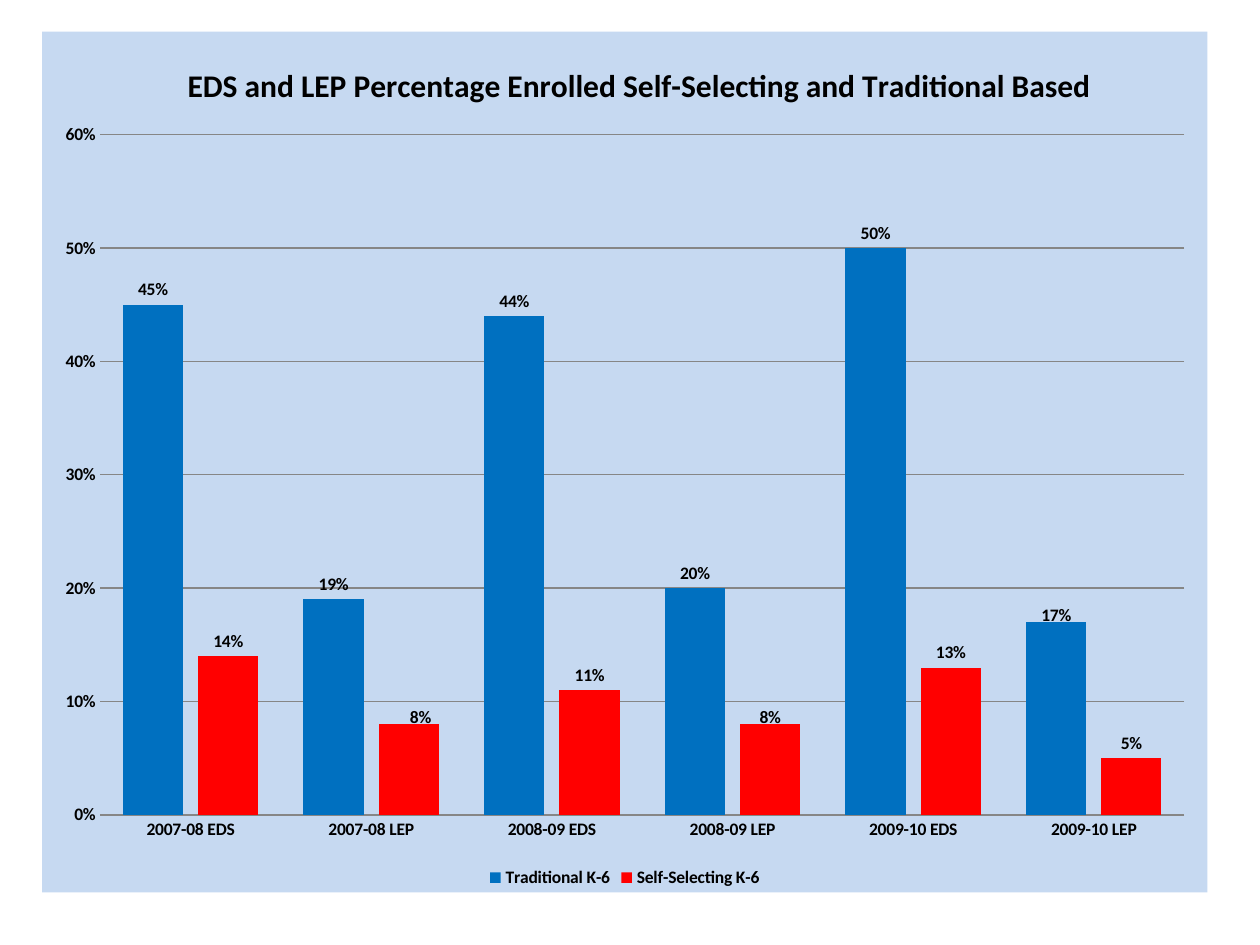
from dataclasses import dataclass, field

from lxml import etree
from pptx import Presentation
from pptx.chart.data import CategoryChartData
from pptx.dml.color import RGBColor
from pptx.enum import chart as kinds
from pptx.oxml import ns
from pptx.util import Pt


@dataclass(frozen=True)
class Theme:
    font: str = "Calibri"
    text: str = "000000"
    panel: str = "C6D9F1"
    grid: str = "868686"
    body_size: int = 10
    title_size: int = 18


@dataclass(frozen=True)
class Series:
    name: str
    color: str
    values: tuple[float, ...]
    # Label shifts by point index, as fractions of the chart size
    label_shifts: dict[int, tuple[float, float]] = field(default_factory=dict)


THEME = Theme()
TITLE = "EDS and LEP Percentage Enrolled Self-Selecting and Traditional Based"
CATEGORIES = [f"{year} {group}" for year in ("2007-08", "2008-09", "2009-10")
              for group in ("EDS", "LEP")]
SERIES = (
    Series("Traditional K-6", "0070C0", (0.45, 0.19, 0.44, 0.20, 0.50, 0.17),
           {5: (0, 0.01)}),
    Series("Self-Selecting K-6", "FF0000", (0.14, 0.08, 0.11, 0.08, 0.13, 0.05),
           {1: (0.01, 0.01), 3: (0, 0.01), 5: (0, 0)}),
)


def style_font(font, size: int = THEME.body_size) -> None:
    font.name = THEME.font
    font.size = Pt(size)
    font.bold = True
    font.color.rgb = RGBColor.from_string(THEME.text)


def make_layout(**settings: object) -> etree._Element:
    layout = etree.Element(ns.qn("c:layout"))
    manual = etree.SubElement(layout, ns.qn("c:manualLayout"))
    for name, value in settings.items():
        etree.SubElement(manual, ns.qn(f"c:{name}")).set("val", str(value))
    return layout


def replace_layout(parent, layout: etree._Element, position: int) -> None:
    for old in parent.findall(ns.qn("c:layout")):
        parent.remove(old)
    parent.insert(position, layout)


def fill_chart_area(chart, color: str) -> None:
    area = etree.Element(ns.qn("c:spPr"))
    fill = etree.SubElement(area, ns.qn("a:solidFill"))
    etree.SubElement(fill, ns.qn("a:srgbClr")).set("val", color)
    line = etree.SubElement(area, ns.qn("a:ln"))
    etree.SubElement(line, ns.qn("a:noFill"))
    chart.element.find(ns.qn("c:chart")).addnext(area)


def style_series(drawn, series: Series) -> None:
    drawn.format.fill.solid()
    drawn.format.fill.fore_color.rgb = RGBColor.from_string(series.color)
    drawn.invert_if_negative = False
    labels = drawn.data_labels
    labels.show_value = True
    labels.number_format = "0%"
    labels.number_format_is_linked = False
    labels.position = kinds.XL_LABEL_POSITION.OUTSIDE_END
    style_font(labels.font)
    for index, (across, down) in series.label_shifts.items():
        label = drawn.points[index].data_label
        label.position = kinds.XL_LABEL_POSITION.OUTSIDE_END
        style_font(label.font)
    # Each point label gets its own shift, in index order
    for element in labels._element.findall(ns.qn("c:dLbl")):
        index = int(element.find(ns.qn("c:idx")).get("val"))
        across, down = series.label_shifts[index]
        replace_layout(element, make_layout(x=across, y=down), 1)


def style_axis(axis) -> None:
    axis.major_tick_mark = kinds.XL_TICK_MARK.NONE
    axis.minor_tick_mark = kinds.XL_TICK_MARK.NONE
    style_font(axis.tick_labels.font)


def add_enrollment_chart(page) -> None:
    data = CategoryChartData(number_format="0%")
    data.categories = CATEGORIES
    for series in SERIES:
        data.add_series(series.name, series.values)
    chart = page.shapes.add_chart(
        kinds.XL_CHART_TYPE.COLUMN_CLUSTERED,
        Pt(24), Pt(18), Pt(666), Pt(492), data).chart
    style_font(chart.font)
    fill_chart_area(chart, THEME.panel)

    # Title
    chart.has_title = True
    frame = chart.chart_title.text_frame
    frame.text = TITLE
    style_font(frame.paragraphs[0].runs[0].font, THEME.title_size)
    chart.chart_title.include_in_layout = False
    replace_layout(chart.chart_title._element, make_layout(
        xMode="edge", yMode="edge", x=0.12, y=0.03), 1)

    # Columns
    plot = chart.plots[0]
    plot.gap_width = 75
    plot.overlap = -25
    plot.vary_by_categories = False
    for drawn, series in zip(plot.series, SERIES):
        style_series(drawn, series)
    plot_area = chart.element.find(".//" + ns.qn("c:plotArea"))
    replace_layout(plot_area, make_layout(
        layoutTarget="inner", xMode="edge", yMode="edge",
        x=0.05, y=0.12, w=0.93, h=0.79), 0)

    # Axes
    grid_color = RGBColor.from_string(THEME.grid)
    style_axis(chart.category_axis)
    chart.category_axis.format.line.color.rgb = grid_color
    values = chart.value_axis
    style_axis(values)
    values.minimum_scale, values.maximum_scale, values.major_unit = 0, 0.6, 0.1
    values.tick_labels.number_format = "0%"
    values.tick_labels.number_format_is_linked = False
    values.format.line.fill.background()
    values.has_major_gridlines = True
    values.major_gridlines.format.line.color.rgb = grid_color
    values.major_gridlines.format.line.width = Pt(0.75)

    # Legend
    chart.has_legend = True
    chart.legend.position = kinds.XL_LEGEND_POSITION.BOTTOM
    chart.legend.include_in_layout = False
    style_font(chart.legend.font)


def main() -> None:
    deck = Presentation()
    deck.slide_width, deck.slide_height = Pt(720), Pt(540)
    page = deck.slides.add_slide(deck.slide_layouts[6])
    add_enrollment_chart(page)
    deck.save("out.pptx")


if __name__ == "__main__":
    main()
